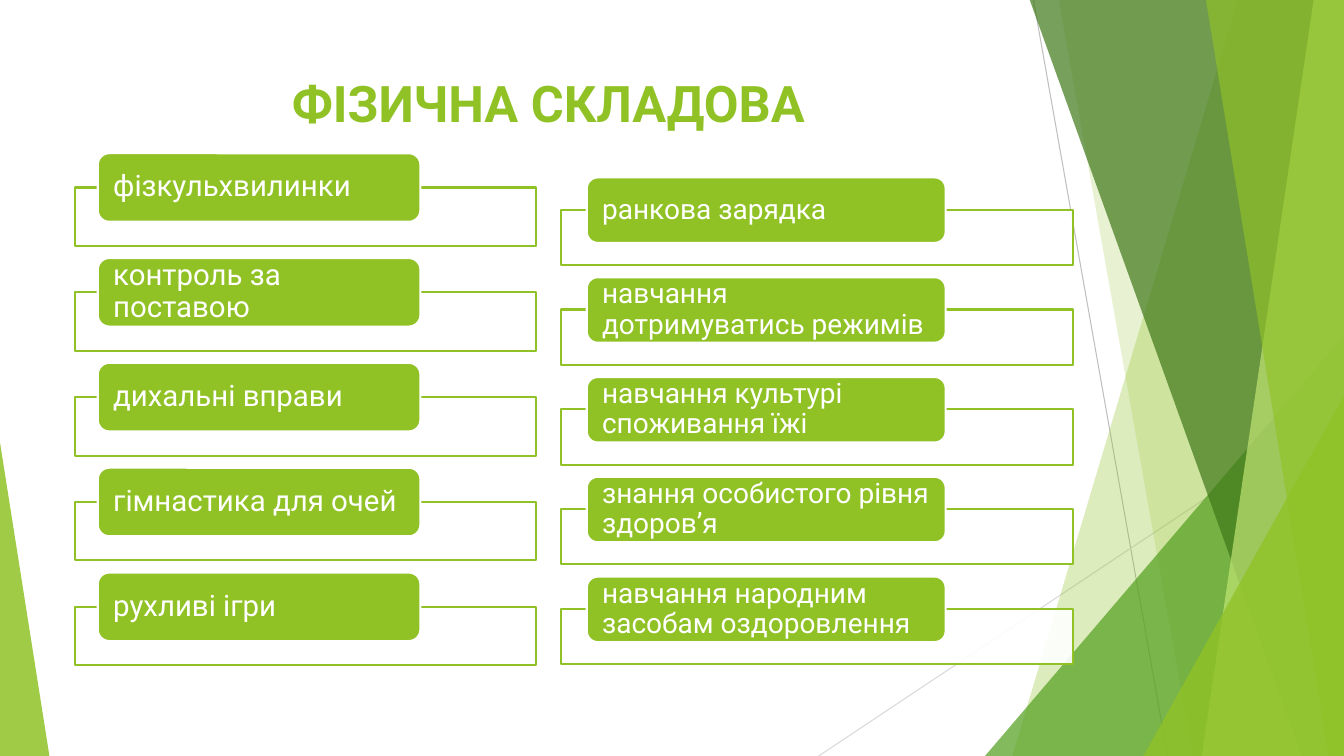
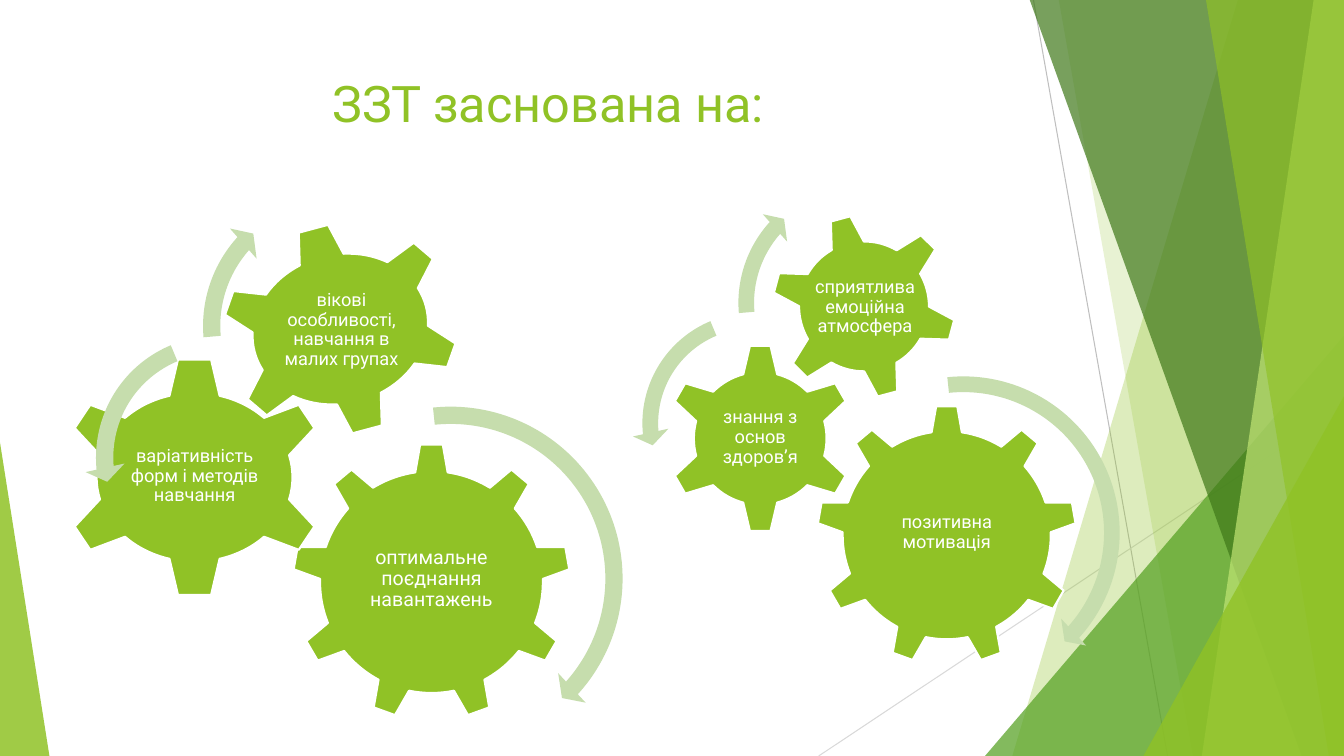
from lxml import etree
from pptx import Presentation
from pptx import util as u
from pptx.dml.color import RGBColor
from pptx.enum import shapes, text
from pptx.oxml import ns

LIME = RGBColor(0x90, 0xC2, 0x26)
GREEN = RGBColor(0x54, 0xA0, 0x21)
DARK = RGBColor(0x3F, 0x78, 0x19)
LIGHT = RGBColor(0xC0, 0xE4, 0x74)
PALE = RGBColor(0xC6, 0xDD, 0xAD)
WHITE = RGBColor(0xFF, 0xFF, 0xFF)
GREY = RGBColor(0xBF, 0xBF, 0xBF)
SILVER = RGBColor(0xD9, 0xD9, 0xD9)
FONT = "Roboto"
WIDE, HIGH, TOP = 13.33, 7.5, -0.01
KIND = shapes.MSO_SHAPE
ALIGN = text.PP_ALIGN
ANCHOR = text.MSO_ANCHOR

LEFT_TABS = ["фізкульхвилинки", "контроль за поставою", "дихальні вправи",
             "гімнастика для очей", "рухливі ігри"]
RIGHT_TABS = ["ранкова зарядка", "навчання дотримуватись режимів",
              "навчання культурі споживання їжі",
              "знання особистого рівня здоров’я",
              "навчання народним засобам оздоровлення"]

NINE = (KIND.GEAR_9, 0, (0.2, 0.23, 0.6, 0.52))
SIX = (KIND.GEAR_6, 0, (0.24, 0.25, 0.52, 0.49))
TILT = (KIND.GEAR_6, 345, (0.22, 0.22, 0.57, 0.57))
LONG = (KIND.CIRCULAR_ARROW, (0.047, 2.99, 25.23, 158.47, 0.055))
BACK = (KIND.LEFT_CIRCULAR_ARROW, (0.065, 4.3, 104.89, 148.38, 0.075))
SHORT = (KIND.CIRCULAR_ARROW, (0.06, 3.94, 133.14, 105.08, 0.07))

GEARS = [
    [(NINE, (2.9, 4.4, 2.76, 2.75), "оптимальне поєднання навантажень", 14),
     (SIX, (0.6, 3.54, 2.66, 2.39), "варіативність форм і методів навчання", 13),
     (TILT, (2.18, 2.21, 2.39, 2.11),
      "вікові особливості, навчання в малих групах", 13)],
    [(NINE, (8.1, 4.02, 2.58, 2.58), "позитивна мотивація", 13),
     (SIX, (6.6, 3.41, 1.88, 1.88), "знання з основ здоров’я", 13),
     (TILT, (7.65, 2.12, 1.84, 1.84), "сприятлива емоційна атмосфера", 13)],
]
ARROWS = [
    [(LONG, 2.65, 3.92, 3.64), (BACK, 0.84, 3.22, 2.64), (SHORT, 1.9, 1.81, 2.85)],
    [(LONG, 7.9, 3.63, 3.31), (BACK, 6.27, 3, 2.4), (SHORT, 7.22, 1.71, 2.59)],
]


def inches(nums):
    return [u.Inches(n) for n in nums]


class Deck:
    def __init__(self):
        self.show = Presentation()
        self.show.slide_width = u.Inches(WIDE)
        self.show.slide_height = u.Inches(HIGH)
        self.base = self.show.slide_layouts[5]
        self.slide = None

    def page(self, words, high, bold=False):
        first = self.slide is None
        self.slide = self.show.slides.add_slide(self.base)
        if first:
            self.facets()
        title = self.slide.shapes.title
        title.left, title.top, title.width, title.height = inches(
            (0.74, 0.67, 9.4, high))
        title.text_frame.vertical_anchor = ANCHOR.TOP
        self.letter(title, words, 36, LIME, ALIGN.CENTER, bold)

    def facets(self):
        self.line((10.25, 0), (11.58, HIGH), GREY)
        self.line((WIDE, 4.03), (8.12, HIGH), SILVER)
        self.facet(12.28, 10.04, LIME, 30)
        self.facet(10.5, 11.83, LIME, 20)
        self.wedge((9.77, 3.33, 3.56, 4.17), 1, GREEN, 72)
        self.facet(10.21, 12.91, DARK, 70)
        self.facet(13.03, 11.92, LIGHT, 70)
        self.facet(11.96, 13.18, LIME, 65)
        self.wedge((11.34, 3.93, 1.99, 3.57), 1, LIME, 80)
        self.wedge((0, 4.39, 0.49, 3.11), 0, LIME, 85)
        for item in list(self.slide.shapes):
            if not item.is_placeholder:
                self.base.shapes.element.append(item.element)

    def line(self, start, end, tint):
        item = self.slide.shapes.add_connector(
            shapes.MSO_CONNECTOR.STRAIGHT, *inches(start + end))
        item.line.color.rgb = tint
        item.line.width = u.Pt(0.75)
        etree.SubElement(item.element.spPr, ns.qn("a:effectLst"))

    def paint(self, item, tint, alpha=100, edge=None):
        item.shadow.inherit = False
        item.fill.solid()
        item.fill.fore_color.rgb = tint
        if alpha < 100:
            mark = item.element.spPr.find(".//" + ns.qn("a:srgbClr"))
            etree.SubElement(mark, ns.qn("a:alpha")).set("val", str(alpha * 1000))
        if edge is None:
            item.line.fill.background()
        else:
            item.line.color.rgb = edge
            item.line.width = u.Pt(1.5)

    def facet(self, head, foot, tint, alpha):
        form = self.slide.shapes.build_freeform(u.Inches(head), u.Inches(TOP))
        form.add_line_segments([inches(spot) for spot in (
            (WIDE, TOP), (WIDE, HIGH), (foot, HIGH))], close=True)
        self.paint(form.convert_to_shape(), tint, alpha)

    def shape(self, kind, box, tint, alpha=100, edge=None):
        item = self.slide.shapes.add_shape(kind, *inches(box))
        self.paint(item, tint, alpha, edge)
        return item

    def wedge(self, box, peak, tint, alpha):
        item = self.shape(KIND.ISOSCELES_TRIANGLE, box, tint, alpha)
        item.adjustments[0] = peak

    def letter(self, item, words, size, tint, align, bold=False):
        item.text_frame.text = words
        para = item.text_frame.paragraphs[0]
        para.alignment = align
        para.font.name = FONT
        para.font.size = u.Pt(size)
        para.font.bold = bold
        para.font.color.rgb = tint
        return para

    def label(self, item, words, size, align, side, edge):
        frame = item.text_frame
        frame.word_wrap = True
        frame.vertical_anchor = ANCHOR.MIDDLE
        frame.margin_left = frame.margin_right = u.Inches(side)
        frame.margin_top = frame.margin_bottom = u.Inches(edge)
        self.letter(item, words, size, WHITE, align).line_spacing = 0.9

    def tabs(self, names, frame, tab, step, size):
        for row, name in enumerate(names):
            drop = row * step
            for kind, box, tint, alpha, edge in (
                    (KIND.RECTANGLE, frame, WHITE, 90, LIME),
                    (KIND.ROUNDED_RECTANGLE, tab, LIME, 100, WHITE)):
                left, top, wide, high = box
                item = self.shape(kind, (left, top + drop, wide, high),
                                  tint, alpha, edge)
            self.label(item, name, size, ALIGN.LEFT, 0.12, 0)

    def gear(self, style, box, words, size):
        kind, turn, part = style
        self.shape(kind, box, LIME, edge=WHITE).rotation = turn
        left, top, wide, high = box
        area = (left + part[0] * wide, top + part[1] * high,
                part[2] * wide, part[3] * high)
        note = self.slide.shapes.add_textbox(*inches(area))
        self.label(note, words, size, ALIGN.CENTER, 0.02, 0.02)

    def arrow(self, style, left, top, size):
        kind, bends = style
        item = self.shape(kind, (left, top, size, size), PALE)
        for spot, bend in enumerate(bends):
            item.adjustments[spot] = bend


def main():
    deck = Deck()
    deck.page("ФІЗИЧНА СКЛАДОВА", 1.44, bold=True)
    deck.tabs(LEFT_TABS, (0.74, 1.86, 4.58, 0.58), (0.97, 1.52, 3.2, 0.68), 1.04, 21)
    deck.tabs(RIGHT_TABS, (5.56, 2.08, 5.08, 0.55), (5.82, 1.76, 3.56, 0.65), 0.99, 20)

    deck.page("ЗЗТ заснована на:", 0.92)
    for gears, arrows in zip(GEARS, ARROWS):
        for gear in gears:
            deck.gear(*gear)
        for arrow in arrows:
            deck.arrow(*arrow)
    deck.show.save("out.pptx")


if __name__ == "__main__":
    main()
